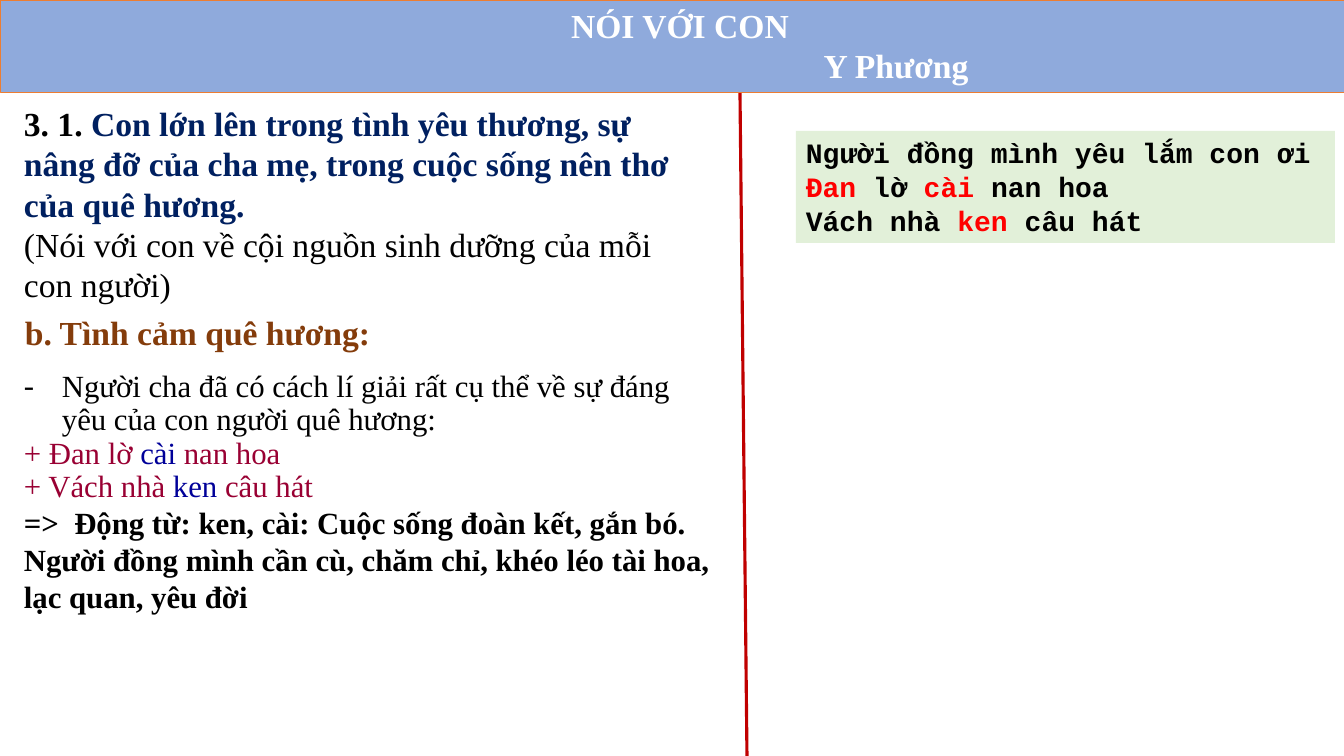
from lxml import etree
from pptx import Presentation
from pptx.dml.color import RGBColor
from pptx.enum.shapes import MSO_CONNECTOR, MSO_SHAPE
from pptx.enum.text import MSO_ANCHOR, MSO_AUTO_SIZE, PP_ALIGN
from pptx.oxml.ns import qn
from pptx.util import Emu, Pt

STRAIGHT, RECTANGLE = MSO_CONNECTOR.STRAIGHT, MSO_SHAPE.RECTANGLE
TOP, GROW = MSO_ANCHOR.TOP, MSO_AUTO_SIZE.SHAPE_TO_FIT_TEXT
LEFT, CENTER = PP_ALIGN.LEFT, PP_ALIGN.CENTER
PX_PER_INCH = 100.8
SLIDE_SIZE = (1344, 756)

COLORS = {
    "black": "000000", "white": "FFFFFF", "navy": "002060", "brown": "843C0B",
    "crimson": "990033", "blue": "000099", "red": "FF0000", "divider": "C00000",
    "banner": "8FAADC", "orange": "ED7D31", "mint": "E2F0D9",
}
SERIF, MONO = "Times New Roman", "Courier New"
DIVIDER = ((740, 90), (747, 756))

BOXES = [
    {"at": (14, 98, 676, 214), "size": 24, "paras": [
        {"bold": True, "spans": [
            ("3. 1. ", "black"),
            ("Con lớn lên trong tình yêu thương, sự nâng đỡ của cha mẹ, "
             "trong cuộc sống nên thơ của quê hương.", "navy")]},
        {"spans": [("(Nói với con về cội nguồn sinh dưỡng của mỗi con người)", "black")]},
    ]},
    {"at": (0, 0, 1344, 92), "size": 24, "fill": "banner", "line": ("orange", 0.5), "paras": [
        {"bold": True, "align": CENTER, "indent": 16, "spans": [("NÓI VỚI CON", "white")]},
        {"bold": True, "align": CENTER, "indent": 448, "spans": [("Y Phương", "white")]},
    ]},
    {"at": (7, 307, 665, 50), "size": 24, "line": ("white", 0.75), "paras": [
        {"bold": True, "indent": 8, "spans": [("b. Tình cảm quê hương:", "brown")]},
    ]},
    {"at": (14, 366, 714, 293), "size": 22, "paras": [
        {"spacing": 0.9, "indent": 38, "bullet": "-", "spans": [
            ("Người cha đã có cách lí giải rất cụ thể về sự đáng "
             "yêu của con người quê hương:", "black")]},
        {"spacing": 0.9, "spans": [
            ("+ Đan lờ ", "crimson"), ("cài", "blue"), (" nan hoa", "crimson")]},
        {"spacing": 0.9, "spans": [
            ("+ Vách nhà ", "crimson"), ("ken ", "blue"), ("câu hát", "crimson")]},
        {"bold": True, "spans": [
            ("=>  Động từ: ken, cài: Cuộc sống đoàn kết, gắn bó.", "black")]},
        {"bold": True, "spans": [
            ("Người đồng mình cần cù, chăm chỉ, khéo léo tài hoa,", "black")]},
        {"bold": True, "spans": [("lạc quan, yêu đời", "black")]},
    ]},
    {"at": (796, 131, 539, 112), "size": 20, "font": MONO, "fill": "mint", "paras": [
        {"bold": True, "spans": [
            ("Người đồng mình yêu lắm con ơi", "black"), ("\n", "black"),
            ("Đan", "red"), (" lờ", "black"), (" cài ", "red"), ("nan hoa", "black"),
            ("\n", "black"),
            ("Vách nhà", "black"), (" ken ", "red"), ("câu hát", "black")]},
    ]},
]


def px(length):
    return Emu(round(length * 914400 / PX_PER_INCH))


def color(name):
    return RGBColor.from_string(COLORS[name])


def set_all(target, values):
    for name, value in values.items():
        setattr(target, name, value)


def add_divider(page):
    (x1, y1), (x2, y2) = DIVIDER
    divider = page.shapes.add_connector(STRAIGHT, px(x1), px(y1), px(x2), px(y2))
    divider.line.color.rgb = color("divider")
    divider.line.width = Pt(2.25)
    etree.SubElement(divider._element.spPr, qn("a:effectLst"))


def add_frame(page, content):
    place = [px(length) for length in content["at"]]
    if "fill" not in content and "line" not in content:
        return page.shapes.add_textbox(*place)
    box = page.shapes.add_shape(RECTANGLE, *place)
    box.shadow.inherit = False
    if "fill" in content:
        box.fill.solid()
        box.fill.fore_color.rgb = color(content["fill"])
    else:
        box.fill.background()
    if "line" in content:
        name, width = content["line"]
        box.line.color.rgb = color(name)
        box.line.width = Pt(width)
    else:
        box.line.fill.background()
    return box


def fill_para(para, content, font, size):
    set_all(para, {"alignment": content.get("align", LEFT),
                   "line_spacing": content.get("spacing", 1.0)})
    layout = para._p.get_or_add_pPr()
    indent = px(content.get("indent", 0))
    layout.set("marL", str(indent))
    if "bullet" in content:
        layout.set("indent", str(-indent))
        etree.SubElement(layout, qn("a:buFont"), typeface=font)
        etree.SubElement(layout, qn("a:buChar"), char=content["bullet"])
    for text, name in content["spans"]:
        if text == "\n":
            para.add_line_break()
            continue
        span = para.add_run()
        span.text = text
        set_all(span.font, {"name": font, "size": Pt(size),
                            "bold": content.get("bold", False)})
        span.font.color.rgb = color(name)


def add_box(page, content):
    frame = add_frame(page, content).text_frame
    set_all(frame, {"word_wrap": True, "auto_size": GROW, "vertical_anchor": TOP})
    for index, para_content in enumerate(content["paras"]):
        para = frame.add_paragraph() if index else frame.paragraphs[0]
        fill_para(para, para_content, content.get("font", SERIF), content["size"])


def main():
    deck = Presentation()
    deck.slide_width, deck.slide_height = [px(length) for length in SLIDE_SIZE]
    page = deck.slides.add_slide(deck.slide_layouts[6])
    add_divider(page)
    for content in BOXES:
        add_box(page, content)
    deck.save("out.pptx")


if __name__ == "__main__":
    main()
